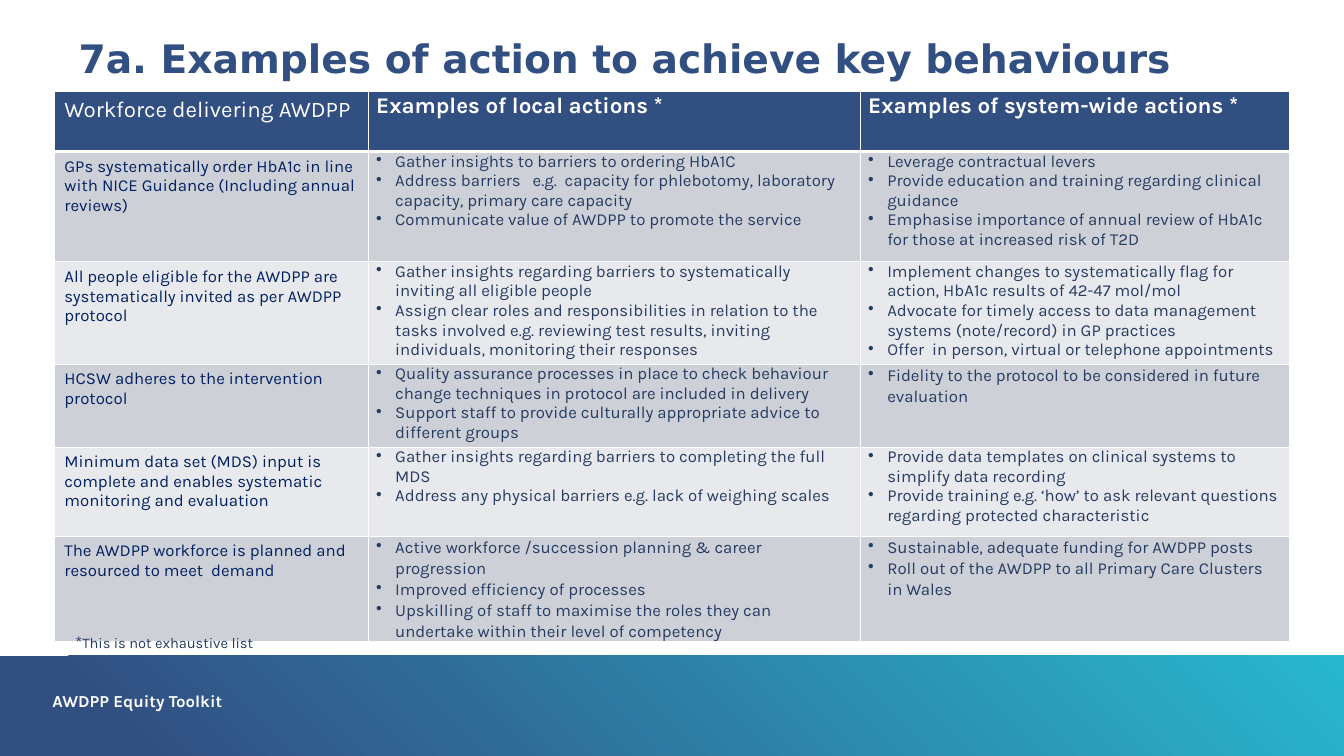
import pptx
import pptx.dml.color
import pptx.enum.shapes
import pptx.enum.text
import pptx.oxml
import pptx.oxml.ns
import pptx.util

Cm, Pt = pptx.util.Cm, pptx.util.Pt
NAVY, TEAL, WHITE = "324F82", "28B8CE", "FFFFFF"
DEEP, SLATE = "002060", "253B61"
BANDS = ("CED0D8", "E8E9ED")
WIDTHS = (7.92, 12.4, 10.8)
HEAD = (
    "Workforce delivering AWDPP",
    "Examples of local actions *",
    "Examples of system-wide actions *",
)
# Each row: height in cm, behaviour, local actions, system-wide actions
ROWS = (
    (2.78, "GPs systematically order HbA1c in line with NICE Guidance "
     "(Including annual reviews)",
     ("Gather insights to barriers to ordering HbA1C",
      "Address barriers   e.g.  capacity for phlebotomy, laboratory capacity, "
      "primary care capacity",
      "Communicate value of AWDPP to promote the service"),
     ("Leverage contractual levers",
      "Provide education and training regarding clinical guidance",
      "Emphasise importance of annual review of HbA1c  for those at "
      "increased risk of T2D")),
    (2.58, "All people eligible for the AWDPP are systematically invited as "
     "per AWDPP protocol",
     ("Gather insights regarding barriers to systematically inviting all "
      "eligible people",
      "Assign clear roles and responsibilities in relation to the tasks "
      "involved e.g. reviewing test results, inviting individuals, "
      "monitoring their responses"),
     ("Implement changes to systematically flag for action, HbA1c results of "
      "42-47 mol/mol",
      "Advocate for timely access to data management systems (note/record) "
      "in GP practices",
      "Offer  in person, virtual or telephone appointments")),
    (2.09, "HCSW adheres to the intervention protocol",
     ("Quality assurance processes in place to check behaviour change "
      "techniques in protocol are included in delivery",
      "Support staff to provide culturally appropriate advice to different "
      "groups"),
     ("Fidelity to the protocol to be considered in future evaluation",)),
    (2.25, "Minimum data set (MDS) input is complete and enables systematic "
     "monitoring and evaluation",
     ("Gather insights regarding barriers to completing the full MDS",
      "Address any physical barriers e.g. lack of weighing scales"),
     ("Provide data templates on clinical systems to simplify data recording",
      "Provide training e.g. ‘how’ to ask relevant questions regarding "
      "protected characteristic")),
    (2.65, "The AWDPP workforce is planned and resourced to meet  demand",
     ("Active workforce /succession planning & career progression",
      "Improved efficiency of processes",
      "Upskilling of staff to maximise the roles they can undertake within "
      "their level of competency"),
     ("Sustainable, adequate funding for AWDPP posts",
      "Roll out of the AWDPP to all Primary Care Clusters in Wales")),
)
LOOSE = {(3, 2), (5, 1), (5, 2)}  # cells with wider line spacing


def shade(text):
    return pptx.dml.color.RGBColor.from_string(text)


def write(para, text, size=12, color=SLATE, bold=False, font="Karla", space=None):
    """Add one formatted run to a paragraph."""
    if space:
        para.line_spacing = space
    run = para.add_run()
    run.text = text
    run.font.name, run.font.size, run.font.bold = font, Pt(size), bold
    run.font.color.rgb = shade(color)


def bullet(para):
    props = para._p.get_or_add_pPr()
    props.set("marL", str(Cm(0.48)))
    props.set("indent", str(-Cm(0.48)))
    mark = pptx.oxml.parse_xml(
        f'<a:buChar {pptx.oxml.ns.nsdecls("a")} char="•"/>')
    props.append(mark)


def paint(cell, color, base=1):
    """Give a cell white borders and a plain fill."""
    props = cell._tc.get_or_add_tcPr()
    for side, width in zip("LRTB", (1, 1, 1, base)):
        props.append(pptx.oxml.parse_xml(
            f'<a:ln{side} {pptx.oxml.ns.nsdecls("a")} w="{Pt(width)}">'
            f'<a:solidFill><a:srgbClr val="{WHITE}"/></a:solidFill></a:ln{side}>'))
    cell.fill.solid()
    cell.fill.fore_color.rgb = shade(color)


def tighten(cell):
    cell.margin_left = cell.margin_right = Cm(0.19)
    cell.margin_top = cell.margin_bottom = 0


def add_list(cell, items, space):
    tighten(cell)
    frame = cell.text_frame
    for i, item in enumerate(items):
        para = frame.add_paragraph() if i else frame.paragraphs[0]
        if space:
            para.line_spacing = space
        bullet(para)
        write(para, item)


def add_grid(slide):
    table = slide.shapes.add_table(
        len(ROWS) + 1, len(WIDTHS), Cm(1.37), Cm(2.31),
        Cm(sum(WIDTHS)), Cm(13.85)).table
    for col, width in zip(table.columns, WIDTHS):
        col.width = Cm(width)
    table.rows[0].height = Cm(1.51)
    for c, text in enumerate(HEAD):
        cell = table.cell(0, c)
        paint(cell, NAVY, base=3)
        if c:
            tighten(cell)
        write(cell.text_frame.paragraphs[0], text, size=16, color=WHITE,
              bold=c > 0, space=1.07 if c else None)
    for r, (height, goal, *lists) in enumerate(ROWS, 1):
        table.rows[r].height = Cm(height)
        for c in range(len(WIDTHS)):
            paint(table.cell(r, c), BANDS[(r - 1) % 2])
        write(table.cell(r, 0).text_frame.paragraphs[0], goal, color=DEEP)
        for c, items in enumerate(lists, 1):
            add_list(table.cell(r, c), items, 1.07 if (r, c) in LOOSE else None)


def add_band(slide):
    band = slide.shapes.add_shape(
        pptx.enum.shapes.MSO_SHAPE.RECTANGLE, 0, Cm(16.53), Cm(33.87), Cm(2.52))
    band.shadow.inherit = False
    band.line.fill.background()
    band.fill.gradient()
    band.fill.gradient_angle = 45
    for stop, place, color in zip(
            band.fill.gradient_stops, (0.1, 1), (NAVY, TEAL)):
        stop.position = place
        stop.color.rgb = shade(color)


def strip(frame):
    """Remove the insets of a text frame."""
    frame.margin_left = frame.margin_right = 0
    frame.margin_top = frame.margin_bottom = 0


def add_box(slide, left, top, width, height):
    frame = slide.shapes.add_textbox(
        Cm(left), Cm(top), Cm(width), Cm(height)).text_frame
    frame.word_wrap = True
    return frame


def set_title(slide, text):
    title = slide.shapes.title
    title.left, title.top = Cm(1.98), Cm(0.99)
    title.width, title.height = Cm(29.9), Cm(1.09)
    frame = title.text_frame
    strip(frame)
    frame.auto_size = pptx.enum.text.MSO_AUTO_SIZE.NONE
    frame.vertical_anchor = pptx.enum.text.MSO_ANCHOR.TOP
    para = frame.paragraphs[0]
    para.alignment = pptx.enum.text.PP_ALIGN.LEFT
    write(para, text, size=28, color=NAVY, bold=True,
          font="DejaVu Sans", space=0.9)


def main():
    deck = pptx.Presentation()
    deck.slide_width, deck.slide_height = Cm(33.87), Cm(19.05)
    slide = deck.slides.add_slide(deck.slide_layouts[5])
    add_band(slide)
    add_grid(slide)
    set_title(slide, "7a. Examples of action to achieve key behaviours")
    note = add_box(slide, 1.65, 15.8, 5.46, 0.76).paragraphs[0]
    write(note, "*")
    write(note, "This is not exhaustive list", size=10.5)
    foot = add_box(slide, 1.32, 17.45, 17.86, 0.46)
    strip(foot)
    write(foot.paragraphs[0], "AWDPP Equity Toolkit", color=WHITE,
          bold=True, space=0.9)
    deck.save("out.pptx")


if __name__ == "__main__":
    main()
